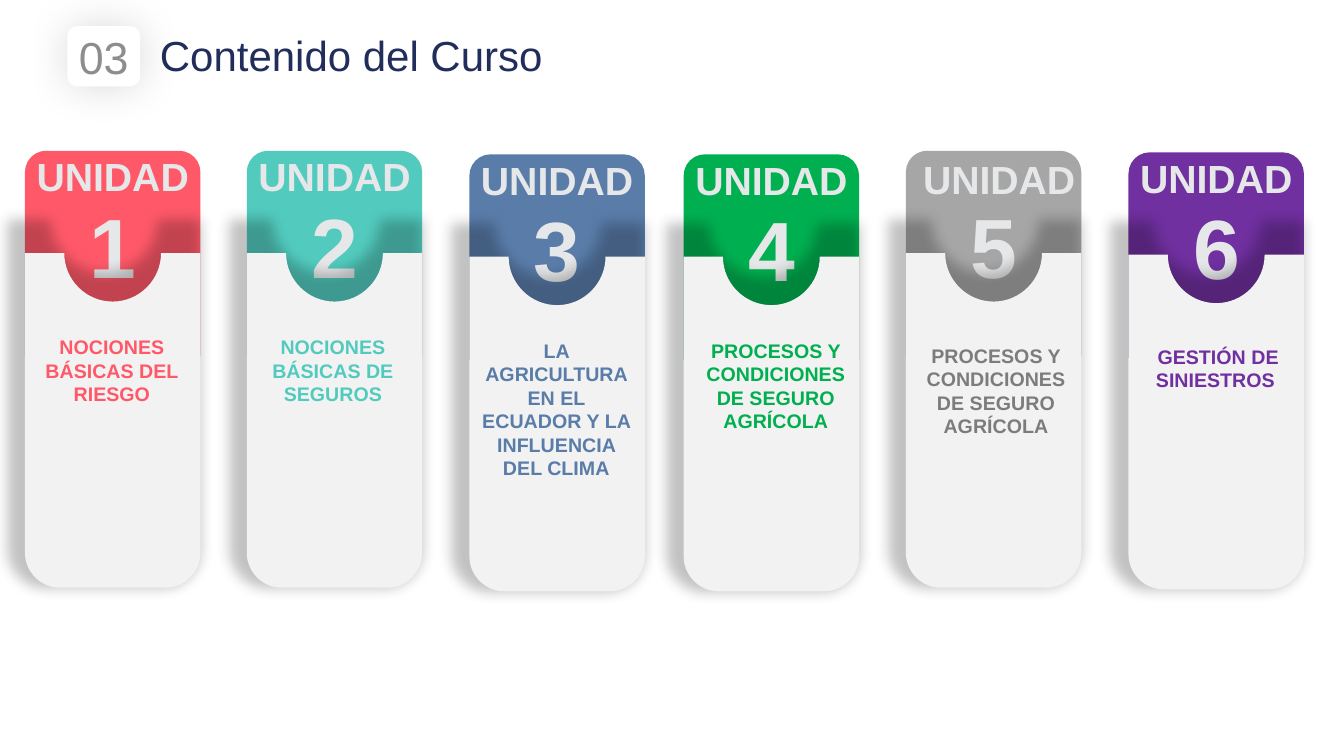
from lxml.etree import SubElement
from pptx import Presentation
from pptx.dml.color import RGBColor
from pptx.enum.shapes import MSO_SHAPE
from pptx.enum.text import MSO_ANCHOR, MSO_AUTO_SIZE, PP_ALIGN
from pptx.oxml.ns import qn
from pptx.util import Cm, Pt

WHITE = RGBColor(0xFF, 0xFF, 0xFF)
BLACK = RGBColor(0x00, 0x00, 0x00)
NAVY = RGBColor(0x21, 0x2D, 0x5A)
BADGE_GRAY = RGBColor(0x8D, 0x8D, 0x8E)
PALE_GRAY = RGBColor(0xE6, 0xE7, 0xE9)
PANEL_GRAY = RGBColor(0xF2, 0xF2, 0xF2)
CORAL = RGBColor(0xFF, 0x59, 0x69)
TEAL = RGBColor(0x52, 0xCB, 0xBE)
BLUE = RGBColor(0x59, 0x7C, 0xA9)
GREEN = RGBColor(0x00, 0xB0, 0x50)
GRAY = RGBColor(0xA6, 0xA6, 0xA6)
DARK_GRAY = RGBColor(0x7C, 0x7C, 0x7C)
PURPLE = RGBColor(0x70, 0x30, 0xA0)

CARD_WIDTH = 4.42
TAB_HEIGHT = 5.18
PANEL_TOP = 2.58
PANEL_HEIGHT = 8.43
PANEL_CORNER = 0.88
NOTCH_RADIUS = 1.22
ROUNDNESS = 0.55

UNITS = [
    dict(left=0.63, top=3.8, color=CORAL, topic="NOCIONES BÁSICAS DEL RIESGO",
         topic_shift=(-0.02, 4.52), lines=3),
    dict(left=6.22, top=3.8, color=TEAL, topic="NOCIONES BÁSICAS DE SEGUROS",
         topic_shift=(-0.04, 4.52), lines=3),
    dict(left=11.83, top=3.89, color=BLUE,
         topic="LA AGRICULTURA EN EL ECUADOR Y LA INFLUENCIA DEL CLIMA",
         topic_shift=(-0.02, 4.52), lines=6),
    dict(left=17.23, top=3.89, color=GREEN,
         topic="PROCESOS Y CONDICIONES DE SEGURO AGRÍCOLA",
         topic_shift=(0.11, 4.52), lines=4),
    dict(left=22.83, top=3.8, color=GRAY, topic_color=DARK_GRAY,
         topic="PROCESOS Y CONDICIONES DE SEGURO AGRÍCOLA",
         topic_shift=(0.06, 4.73), lines=4, heading_shift=(-0.15, 0), grouped=False),
    dict(left=28.44, top=3.84, color=PURPLE, topic="GESTIÓN DE SINIESTROS ",
         topic_shift=(0.05, 4.72), lines=2),
]


def write_text(frame, text, size, color, bold=False, align=PP_ALIGN.CENTER,
               anchor=MSO_ANCHOR.TOP, inset=None):
    frame.word_wrap = True
    frame.auto_size = MSO_AUTO_SIZE.SHAPE_TO_FIT_TEXT
    frame.vertical_anchor = anchor
    if inset is not None:
        frame.margin_left = frame.margin_right = inset
        frame.margin_top = frame.margin_bottom = inset
    paragraph = frame.paragraphs[0]
    paragraph.alignment = align
    run = paragraph.add_run()
    run.text = text
    run.font.name = "Arial"
    run.font.size = Pt(size)
    run.font.bold = bold
    run.font.color.rgb = color


def paint(shape, color):
    shape.fill.solid()
    shape.fill.fore_color.rgb = color
    shape.line.fill.background()
    shape.shadow.inherit = False


def cast_shadow(shape, opacity, blur, scale=100, align="ctr"):
    effects = shape._element.spPr.find(qn("a:effectLst"))
    shadow = SubElement(effects, qn("a:outerShdw"), blurRad=str(Pt(blur)),
                        sx=str(scale * 1000), sy=str(scale * 1000),
                        algn=align, rotWithShape="0")
    tint = SubElement(shadow, qn("a:srgbClr"), val=str(BLACK))
    SubElement(tint, qn("a:alpha"), val=str(opacity * 1000))


def quarter_turn(start, corner, end):
    controls = [tuple(p + ROUNDNESS * (c - p) for p, c in zip(point, corner))
                for point in (start, end)]
    return [*controls, end]


def draw_outline(shapes, start, segments):
    builder = shapes.build_freeform(Cm(start[0]), Cm(start[1]))
    builder.add_line_segments([(Cm(x), Cm(y)) for segment in segments for x, y in segment],
                              close=True)
    outline = builder.convert_to_shape()
    steps = iter(list(outline._element.iter(qn("a:lnTo"))))
    for segment in segments:
        first, *others = [next(steps) for _ in segment]
        if others:
            first.tag = qn("a:cubicBezTo")
        for step in others:
            first.append(step[0])
            step.getparent().remove(step)
    return outline


def add_header(slide, left, top, width, height):
    badge = slide.shapes.add_shape(MSO_SHAPE.ROUNDED_RECTANGLE, Cm(left), Cm(top),
                                   Cm(1.83), Cm(height))
    paint(badge, WHITE)
    cast_shadow(badge, opacity=15, blur=30)
    write_text(badge.text_frame, "03", size=32, color=BADGE_GRAY,
               anchor=MSO_ANCHOR.MIDDLE, inset=0)

    title = slide.shapes.title
    title.left, title.top = Cm(left + 2.33), Cm(top + 0.08)
    title.width, title.height = Cm(width - 2.33), Cm(1.27)
    write_text(title.text_frame, "Contenido del Curso", size=30, color=NAVY,
               align=PP_ALIGN.LEFT, anchor=MSO_ANCHOR.MIDDLE, inset=0)


def add_tab(shapes, number, left, top, color, heading_shift):
    tab = shapes.add_shape(MSO_SHAPE.ROUND_2_SAME_RECTANGLE, Cm(left), Cm(top),
                           Cm(CARD_WIDTH), Cm(TAB_HEIGHT))
    tab.adjustments[0] = 0.121
    tab.adjustments[1] = 0
    paint(tab, color)
    shift_x, shift_y = heading_shift
    heading = shapes.add_textbox(Cm(left + shift_x), Cm(top + shift_y), Cm(5), Cm(1.45))
    write_text(heading.text_frame, "UNIDAD", size=28, color=PALE_GRAY, bold=True)
    numeral = shapes.add_textbox(Cm(left + 0.97), Cm(top + 0.97), Cm(2.49), Cm(2.82))
    write_text(numeral.text_frame, str(number), size=60, color=PALE_GRAY, bold=True)


def add_panel(shapes, left, top):
    right, bottom = left + CARD_WIDTH, top + PANEL_HEIGHT
    middle = left + CARD_WIDTH / 2
    notch_left, notch_right = middle - NOTCH_RADIUS, middle + NOTCH_RADIUS
    notch_bottom = top + NOTCH_RADIUS
    corner_top = bottom - PANEL_CORNER
    corner_left, corner_right = left + PANEL_CORNER, right - PANEL_CORNER
    panel = draw_outline(shapes, (left, top), [
        [(notch_left, top)],
        quarter_turn((notch_left, top), (notch_left, notch_bottom), (middle, notch_bottom)),
        quarter_turn((middle, notch_bottom), (notch_right, notch_bottom), (notch_right, top)),
        [(right, top)],
        [(right, corner_top)],
        quarter_turn((right, corner_top), (right, bottom), (corner_right, bottom)),
        [(corner_left, bottom)],
        quarter_turn((corner_left, bottom), (left, bottom), (left, corner_top)),
    ])
    paint(panel, PANEL_GRAY)
    cast_shadow(panel, opacity=23, blur=10, scale=110, align="br")


def add_unit(slide, number, left, top, color, topic, topic_shift, lines,
             topic_color=None, heading_shift=(-0.29, -0.08), grouped=True):
    tab_shapes = slide.shapes.add_group_shape().shapes if grouped else slide.shapes
    add_tab(tab_shapes, number, left, top, color, heading_shift)
    add_panel(slide.shapes, left, top + PANEL_TOP)
    shift_x, shift_y = topic_shift
    topic_box = slide.shapes.add_textbox(Cm(left + shift_x), Cm(top + shift_y),
                                         Cm(CARD_WIDTH), Cm(0.25 + 0.6 * lines))
    write_text(topic_box.text_frame, topic, size=14, color=topic_color or color, bold=True)


def main():
    deck = Presentation()
    deck.slide_width, deck.slide_height = Cm(33.87), Cm(19.05)
    slide = deck.slides.add_slide(deck.slide_layouts[5])
    add_header(slide, left=1.7, top=0.66, width=19.03, height=1.52)
    for number, unit in enumerate(UNITS, start=1):
        add_unit(slide, number, **unit)
    deck.save("out.pptx")


if __name__ == "__main__":
    main()
